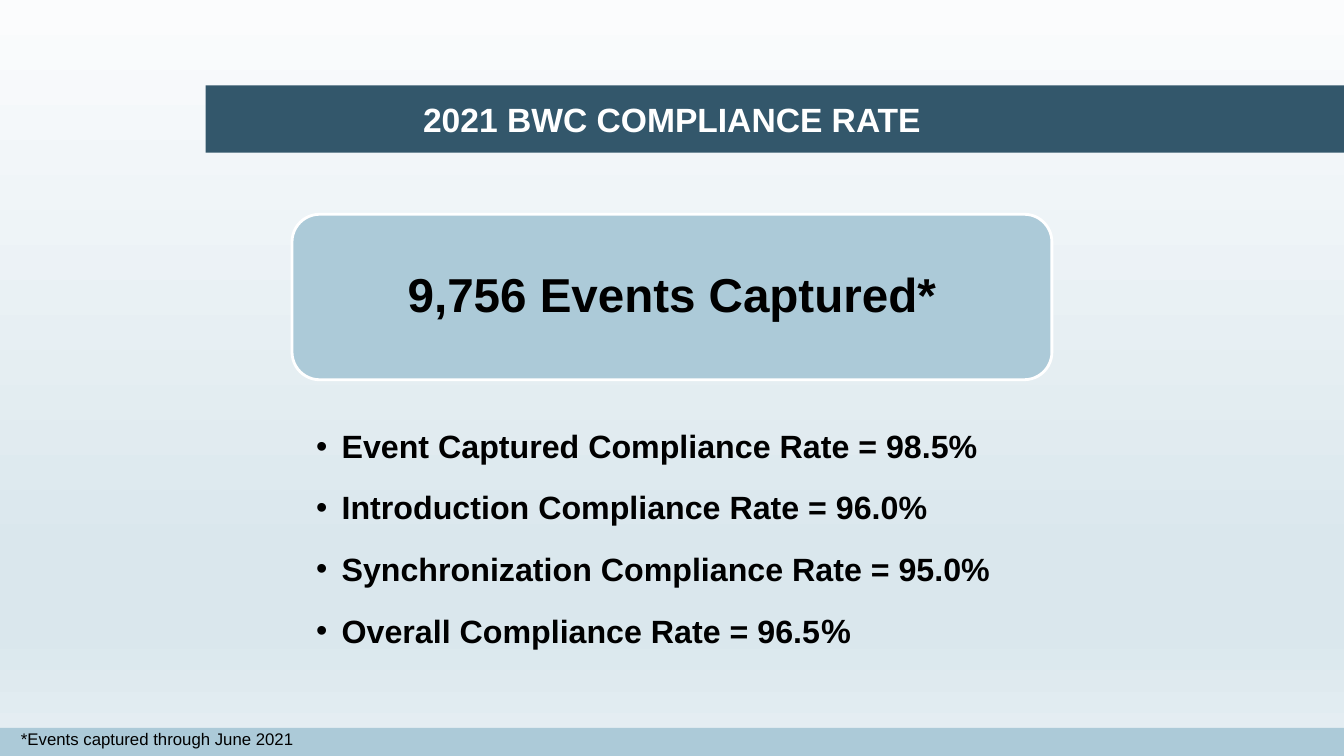
from lxml.etree import SubElement
from pptx import Presentation
from pptx.dml.color import RGBColor
from pptx.enum.shapes import MSO_SHAPE
from pptx.enum.text import MSO_ANCHOR, PP_ALIGN
from pptx.oxml.ns import qn
from pptx.util import Cm, Pt

HUES = {"navy": "33576B", "sky": "ACCAD8", "white": "FFFFFF", "black": "000000",
        "top": "FBFCFD", "mist": "DAE7ED", "base": "E6EFF3"}


def color(name):
    return RGBColor.from_string(HUES[name])


def write(shape, lines, size, hue="black", bold=True, align=PP_ALIGN.LEFT,
          anchor=MSO_ANCHOR.TOP, space=1.0, after=0, bullet=False):
    frame = shape.text_frame
    frame.word_wrap = True
    frame.vertical_anchor = anchor
    frame.margin_left = frame.margin_right = 0
    frame.margin_top = frame.margin_bottom = 0
    for i, line in enumerate(lines):
        para = frame.paragraphs[0] if i == 0 else frame.add_paragraph()
        para.alignment = align
        para.line_spacing = space
        para.space_after = Pt(after)
        if bullet:
            props = para._p.get_or_add_pPr()
            props.set("marL", str(Cm(0.64)))
            props.set("indent", str(-Cm(0.64)))
            SubElement(props, qn("a:buFont"), typeface="Arial")
            SubElement(props, qn("a:buChar"), char="•")
        for text, points in line if isinstance(line, list) else [(line, size)]:
            run = para.add_run()
            run.text = text
            run.font.name = "Arial"
            run.font.size = Pt(points)
            run.font.bold = bold
            run.font.color.rgb = color(hue)


deck = Presentation()
deck.slide_width, deck.slide_height = Cm(33.87), Cm(19.05)
slide = deck.slides.add_slide(deck.slide_layouts[6])
shapes = slide.shapes

fill = slide.background.fill
fill.gradient()
fill.gradient_angle = 270
stops = fill._fill._gradFill.find(qn("a:gsLst"))
for stop in list(stops):
    stops.remove(stop)
for spot, name in [(0, "top"), (74, "mist"), (83, "mist"), (100, "base")]:
    stop = SubElement(stops, qn("a:gs"), pos=str(spot * 1000))
    SubElement(stop, qn("a:srgbClr"), val=HUES[name])

panels = []
for kind, hue, left, top, width, height in [
    (MSO_SHAPE.RECTANGLE, "navy", 5.18, 2.15, 28.69, 1.7),
    (MSO_SHAPE.RECTANGLE, "sky", 0, 18.34, 33.87, 0.71),
    (MSO_SHAPE.ROUNDED_RECTANGLE, "sky", 7.36, 5.4, 19.15, 4.17),
]:
    panel = shapes.add_shape(kind, Cm(left), Cm(top), Cm(width), Cm(height))
    panel.shadow.inherit = False
    panel.fill.solid()
    panel.fill.fore_color.rgb = color(hue)
    panel.line.fill.background()
    panels.append(panel)

card = panels[-1]
card.line.color.rgb = color("white")
card.line.width = Pt(2)
write(card, ["9,756 Events Captured*"], 34, align=PP_ALIGN.CENTER,
      anchor=MSO_ANCHOR.MIDDLE, space=0.9)

title = shapes.add_textbox(0, Cm(2.18), Cm(33.87), Cm(1.63))
write(title, ["2021 BWC COMPLIANCE RATE"], 24, hue="white",
      align=PP_ALIGN.CENTER, anchor=MSO_ANCHOR.MIDDLE)

rates = shapes.add_textbox(Cm(7.97), Cm(10.85), Cm(18.3), Cm(5.9))
write(rates, ["Event Captured Compliance Rate = 98.5%",
              "Introduction Compliance Rate = 96.0%",
              "Synchronization Compliance Rate = 95.0%",
              [("Overall Compliance Rate = 96.5", 23), ("%", 24)]],
      23, space=0.9, after=19, bullet=True)

note = shapes.add_textbox(Cm(0.53), Cm(18.36), Cm(10.03), Cm(0.51))
write(note, ["*Events captured through June 2021"], 12, bold=False)

deck.save("out.pptx")
